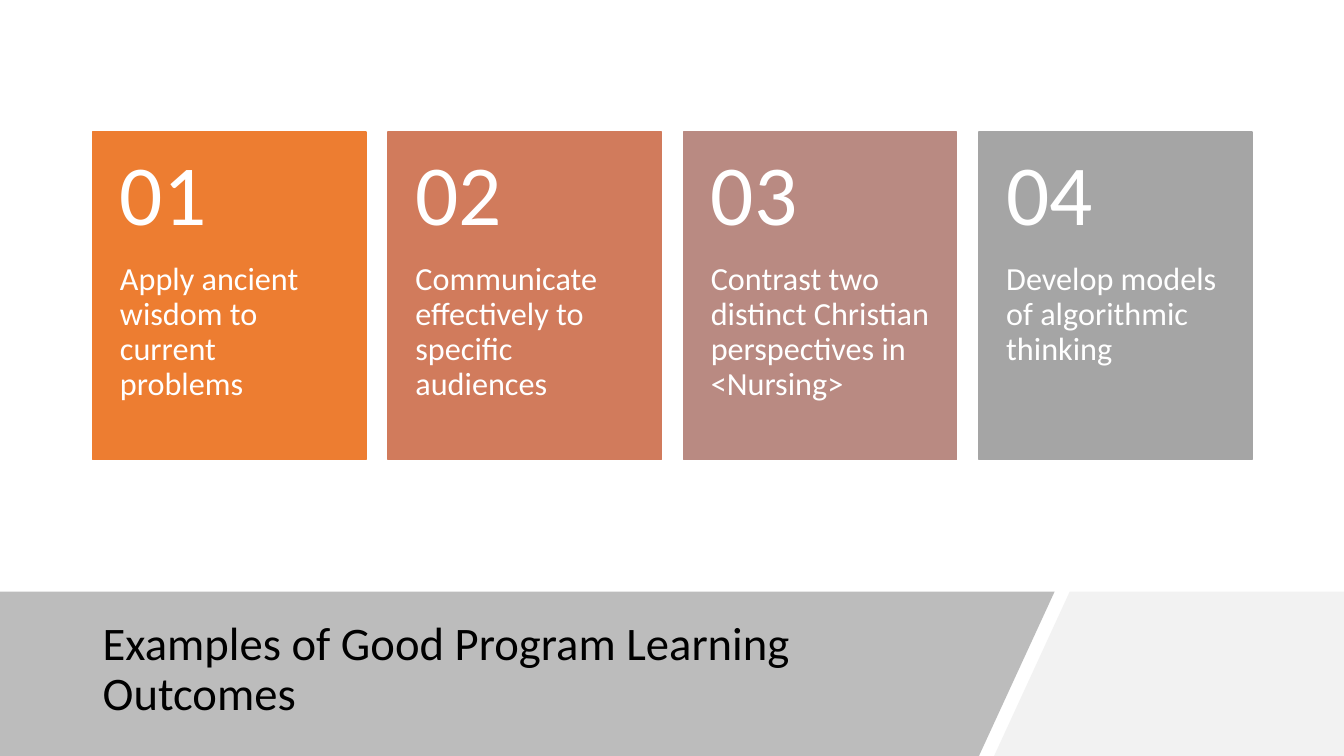
import lxml.etree
import pptx
import pptx.dml.color
import pptx.enum.shapes
import pptx.enum.text
import pptx.oxml.ns
import pptx.util

Inches = pptx.util.Inches

COLOURS = {
    "text": "000000",
    "card text": "FFFFFF",
    "title band": "595959",
    "corner": "F2F2F2",
}

OUTCOMES = [
    ("ED7D31", "Apply ancient wisdom to current problems"),
    ("D17B5C", "Communicate effectively to specific audiences"),
    ("B98A82", "Contrast two distinct Christian perspectives in <Nursing>"),
    ("A5A5A5", "Develop models of algorithmic thinking"),
]

CARD_LEFT, CARD_TOP, CARD_WIDTH, CARD_HEIGHT = 0.92, 1.31, 2.71, 3.25
CARD_PITCH = 2.93
NUMBER_HEIGHT = 1.3
BAND_TOP, SLIDE_WIDTH, SLIDE_HEIGHT = 5.87, 13.33, 7.5


class SlideBuilder:
    font_name = "Calibri"

    def __init__(self, slide):
        self.slide = slide

    def colour(self, value):
        return pptx.dml.color.RGBColor.from_string(value)

    def fill(self, shape, colour):
        shape.shadow.inherit = False
        shape.fill.solid()
        shape.fill.fore_color.rgb = self.colour(colour)

    def polygon(self, points, colour, opacity=100):
        corners = [(Inches(x), Inches(y)) for x, y in points]
        builder = self.slide.shapes.build_freeform(*corners[0], scale=1.0)
        builder.add_line_segments(corners[1:], close=True)
        shape = builder.convert_to_shape()
        self.fill(shape, colour)
        shape.line.fill.background()
        if opacity < 100:
            qualified = pptx.oxml.ns.qn
            solid = shape.element.spPr.find(qualified("a:solidFill"))
            alpha = lxml.etree.SubElement(solid[0], qualified("a:alpha"))
            alpha.set("val", str(opacity * 1000))

    def rectangle(self, left, top, width, height, colour):
        shape = self.slide.shapes.add_shape(
            pptx.enum.shapes.MSO_SHAPE.RECTANGLE,
            Inches(left), Inches(top), Inches(width), Inches(height))
        self.fill(shape, colour)
        shape.line.color.rgb = self.colour(colour)
        shape.line.width = pptx.util.Pt(1)

    def text(self, left, top, width, height, words, size, colour,
             margins=(0.1, 0.05, 0.1, 0.05), middle=True):
        box = self.slide.shapes.add_textbox(
            Inches(left), Inches(top), Inches(width), Inches(height))
        frame = box.text_frame
        frame.word_wrap = True
        anchors = pptx.enum.text.MSO_ANCHOR
        frame.vertical_anchor = anchors.MIDDLE if middle else anchors.TOP
        (frame.margin_left, frame.margin_top, frame.margin_right,
         frame.margin_bottom) = map(Inches, margins)
        paragraph = frame.paragraphs[0]
        paragraph.text = words
        paragraph.line_spacing = 0.9
        paragraph.font.name = self.font_name
        paragraph.font.size = pptx.util.Pt(size)
        paragraph.font.color.rgb = self.colour(colour)

    def card(self, index, colour, outcome):
        left = CARD_LEFT + index * CARD_PITCH
        self.rectangle(left, CARD_TOP, CARD_WIDTH, CARD_HEIGHT, colour)
        self.text(left, CARD_TOP + NUMBER_HEIGHT, CARD_WIDTH,
                  CARD_HEIGHT - NUMBER_HEIGHT, outcome, 23,
                  COLOURS["card text"], (0.27, 0, 0.27, 0.36), middle=False)
        self.text(left, CARD_TOP, CARD_WIDTH, NUMBER_HEIGHT,
                  f"{index + 1:02}", 61, COLOURS["card text"],
                  (0.27, 0.18, 0.27, 0.18))


def main():
    deck = pptx.Presentation()
    deck.slide_width = Inches(SLIDE_WIDTH)
    deck.slide_height = Inches(SLIDE_HEIGHT)
    page = SlideBuilder(deck.slides.add_slide(deck.slide_layouts[6]))

    page.polygon([(10.61, BAND_TOP), (SLIDE_WIDTH, BAND_TOP),
                  (SLIDE_WIDTH, SLIDE_HEIGHT), (9.86, SLIDE_HEIGHT)],
                 COLOURS["corner"])
    page.polygon([(0, BAND_TOP), (10.46, BAND_TOP),
                  (9.71, SLIDE_HEIGHT), (0, SLIDE_HEIGHT)],
                 COLOURS["title band"], opacity=40)
    page.text(0.92, 6.05, 8.83, 1.2,
              "Examples of Good Program Learning Outcomes", 33.3,
              COLOURS["text"])

    for index, (colour, outcome) in enumerate(OUTCOMES):
        page.card(index, colour, outcome)

    deck.save("out.pptx")


if __name__ == "__main__":
    main()
